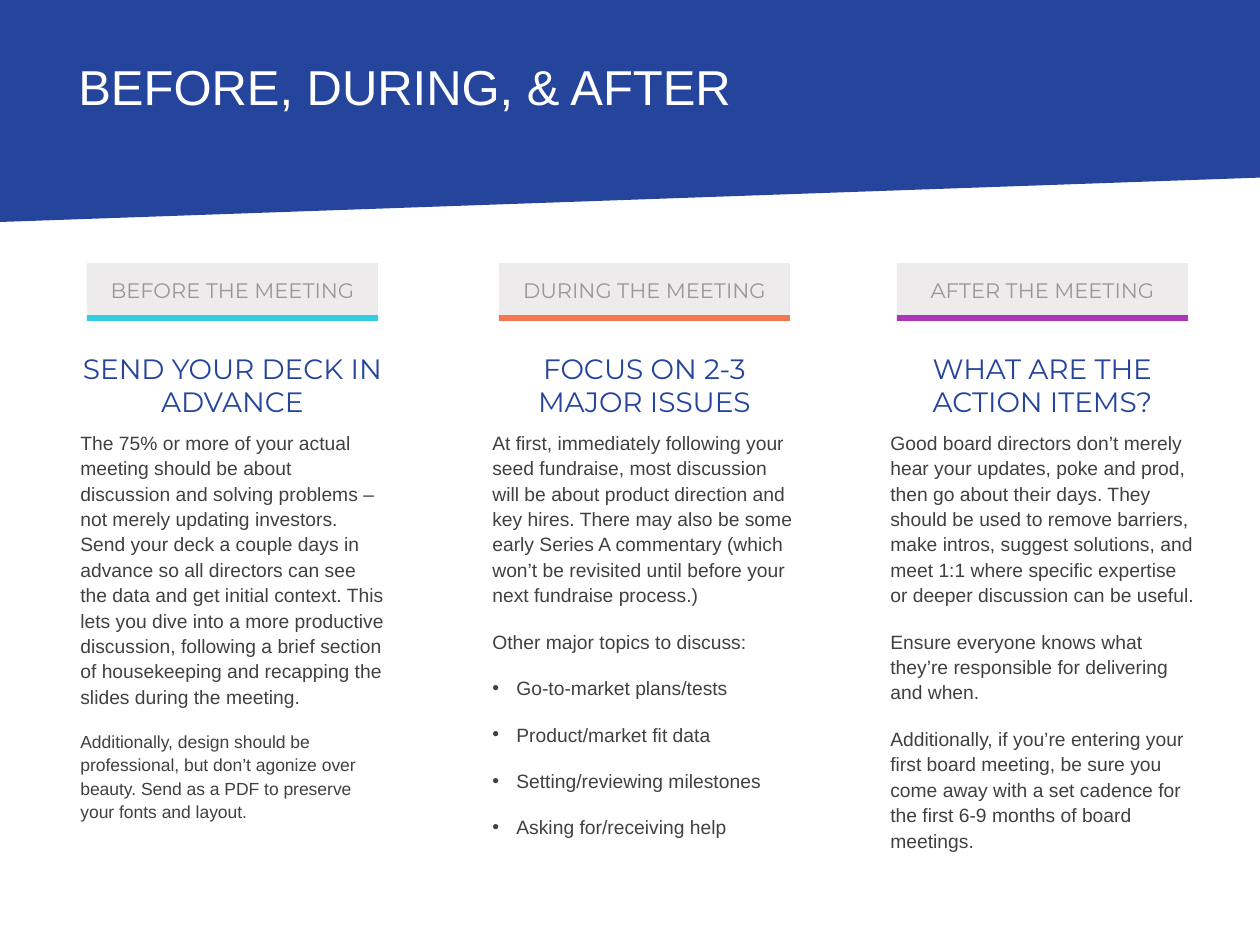
from dataclasses import dataclass

from lxml import etree
from pptx import Presentation
from pptx.dml.color import RGBColor
from pptx.enum.shapes import MSO_SHAPE
from pptx.enum.text import MSO_ANCHOR, PP_ALIGN
from pptx.oxml.ns import qn
from pptx.util import Emu, Pt

RECT = MSO_SHAPE.RECTANGLE
BANNER = MSO_SHAPE.FLOWCHART_MANUAL_INPUT
MIDDLE = MSO_ANCHOR.MIDDLE
CENTER = PP_ALIGN.CENTER
EMU_PER_PX = 914400 / 126
BLUE, WHITE, BODY = "25459D", "FFFFFF", "404040"
TAB_FILL, TAB_TEXT = "EDEBEB", "989898"
SANS, DISPLAY = "Arial", "Montserrat"
TAB_INSET = 19
BULLET_INDENT = 24


@dataclass(frozen=True)
class Para:
    text: str
    size: int = 11
    bullet: bool = False


@dataclass(frozen=True)
class Column:
    left: int
    height: int
    accent: str
    tab: str
    heading: str
    paras: tuple[Para, ...]


COLUMNS = (
    Column(68, 505, "33CDE1", "BEFORE THE MEETING", "SEND YOUR DECK IN ADVANCE", (
        Para("The 75% or more of your actual meeting should be about discussion and "
             "solving problems – not merely updating investors. Send your deck a couple "
             "days in advance so all directors can see the data and get initial context. "
             "This lets you dive into a more productive discussion, following a brief "
             "section of housekeeping and recapping the slides during the meeting."),
        Para("Additionally, design should be professional, but don’t agonize over "
             "beauty. Send as a PDF to preserve your fonts and layout.", size=10),
    )),
    Column(480, 505, "F47651", "DURING THE MEETING", "FOCUS ON 2-3 MAJOR ISSUES", (
        Para("At first, immediately following your seed fundraise, most discussion will "
             "be about product direction and key hires. There may also be some early "
             "Series A commentary (which won’t be revisited until before your next "
             "fundraise process.)"),
        Para("Other major topics to discuss:"),
        Para("Go-to-market plans/tests", bullet=True),
        Para("Product/market fit data", bullet=True),
        Para("Setting/reviewing milestones", bullet=True),
        Para("Asking for/receiving help", bullet=True),
    )),
    Column(878, 518, "AC35B8", "AFTER THE MEETING", "WHAT ARE THE ACTION ITEMS?", (
        Para("Good board directors don’t merely hear your updates, poke and prod, then "
             "go about their days. They should be used to remove barriers, make intros, "
             "suggest solutions, and meet 1:1 where specific expertise or deeper "
             "discussion can be useful."),
        Para("Ensure everyone knows what they’re responsible for delivering and when."),
        Para("Additionally, if you’re entering your first board meeting, be sure you "
             "come away with a set cadence for the first 6-9 months of board meetings."),
    )),
)


def px(n: int) -> Emu:
    return Emu(round(n * EMU_PER_PX))


def rgb(color: str) -> RGBColor:
    return RGBColor.from_string(color)


def set_text(p, text: str, font: str, size: int, color: str) -> None:
    p.text = text
    for r in p.runs:
        r.font.name = font
        r.font.size = Pt(size)
        r.font.color.rgb = rgb(color)


def add_block(shapes, kind, x: int, y: int, w: int, h: int, color: str):
    sp = shapes.add_shape(kind, px(x), px(y), px(w), px(h))
    sp.shadow.inherit = False
    sp.fill.solid()
    sp.fill.fore_color.rgb = rgb(color)
    sp.line.fill.background()
    return sp


def add_text_frame(s, x: int, y: int, w: int, h: int):
    tf = s.shapes.add_textbox(px(x), px(y), px(w), px(h)).text_frame
    tf.word_wrap = True
    return tf


def add_bullet(p) -> None:
    pPr = p._p.get_or_add_pPr()
    pPr.set("marL", str(px(BULLET_INDENT)))
    pPr.set("indent", str(-px(BULLET_INDENT)))
    etree.SubElement(pPr, qn("a:buFont")).set("typeface", SANS)
    etree.SubElement(pPr, qn("a:buChar")).set("char", "•")


def add_tab(s, col: Column) -> None:
    group = s.shapes.add_group_shape()
    x = col.left + TAB_INSET
    tf = add_block(group.shapes, RECT, x, 263, 291, 54, TAB_FILL).text_frame
    tf.vertical_anchor = MIDDLE
    p = tf.paragraphs[0]
    p.alignment = CENTER
    set_text(p, col.tab, DISPLAY, 12, TAB_TEXT)
    add_block(group.shapes, RECT, x, 315, 291, 6, col.accent)


def add_column(s, col: Column) -> None:
    add_tab(s, col)
    tf = add_text_frame(s, col.left, 345, 329, col.height)
    p = tf.paragraphs[0]
    p.alignment = CENTER
    p.space_before = Pt(6)
    set_text(p, col.heading, DISPLAY, 16, BLUE)
    for para in col.paras:
        p = tf.add_paragraph()
        p.line_spacing = 1.1
        p.space_before = p.space_after = Pt(6)
        set_text(p, para.text, SANS, para.size, BODY)
        if para.bullet:
            add_bullet(p)


def main() -> None:
    prs = Presentation()
    prs.slide_width, prs.slide_height = px(1260), px(945)
    s = prs.slides.add_slide(prs.slide_layouts[6])
    add_block(s.shapes, BANNER, 0, 0, 1260, 222, BLUE).rotation = 180
    tf = add_text_frame(s, 66, 0, 1062, 171)
    tf.vertical_anchor = MIDDLE
    set_text(tf.paragraphs[0], "BEFORE, DURING, & AFTER", SANS, 28, WHITE)
    for col in COLUMNS:
        add_column(s, col)
    prs.save("out.pptx")


if __name__ == "__main__":
    main()
